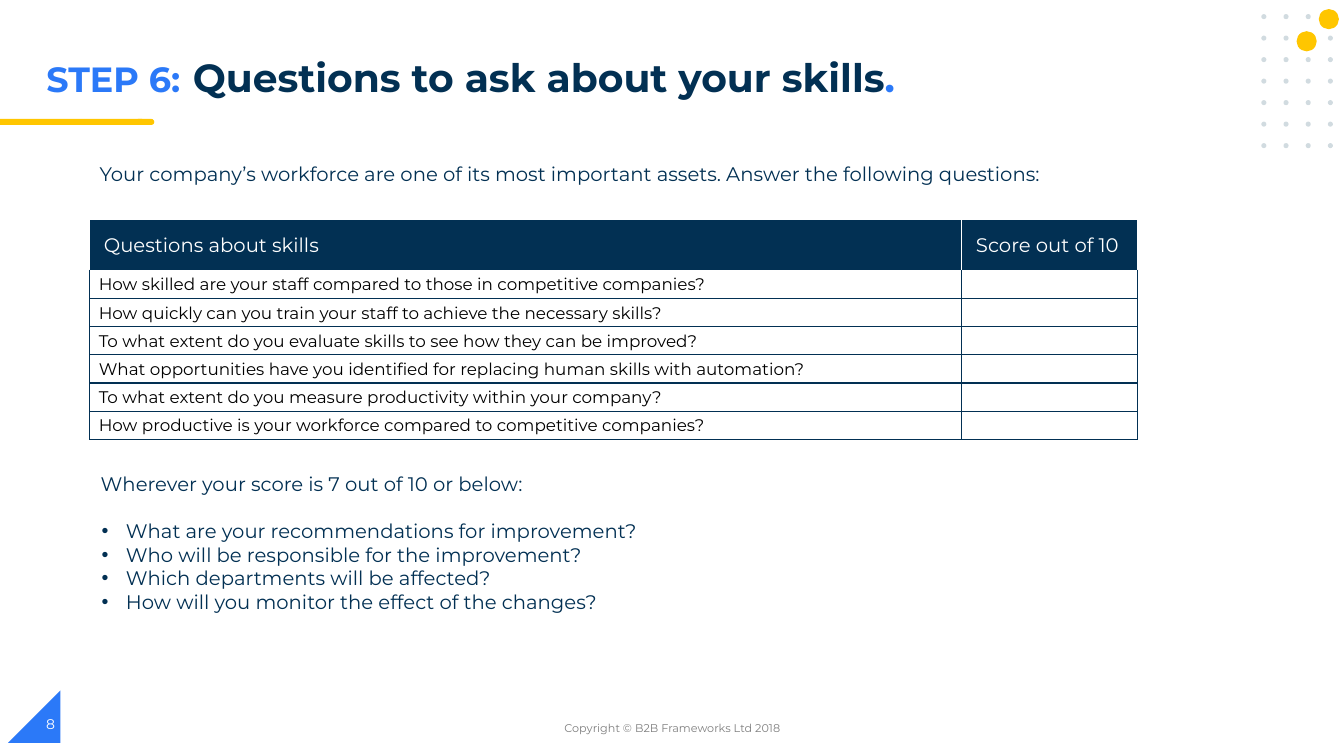
"""Build the slide of questions to ask about a company's skills."""
from dataclasses import dataclass
from itertools import product

from lxml.etree import SubElement
from pptx import Presentation
from pptx.dml.color import RGBColor
from pptx.enum.shapes import MSO_SHAPE as SHAPE
from pptx.enum.text import MSO_ANCHOR as ANCHOR, MSO_AUTO_SIZE as AUTO_SIZE, PP_ALIGN as ALIGN
from pptx.oxml.ns import qn
from pptx.util import Inches, Pt

NAVY = RGBColor(0x02, 0x30, 0x53)
BLUE = RGBColor(0x2B, 0x79, 0xF8)
YELLOW = RGBColor(0xFF, 0xC6, 0x00)
PALE = RGBColor(0xD1, 0xDB, 0xE0)
GRAY = RGBColor(0x7F, 0x7F, 0x7F)
BLACK = RGBColor(0x00, 0x00, 0x00)
WHITE = RGBColor(0xFF, 0xFF, 0xFF)
FONT = "Montserrat"


@dataclass
class Deco:
    kind: SHAPE
    left: float
    top: float
    width: float
    height: float
    color: RGBColor
    flip: bool = False


@dataclass
class Label:
    text: str
    left: float
    top: float
    width: float
    height: float
    size: int
    color: RGBColor
    align: ALIGN = ALIGN.LEFT
    anchor: ANCHOR = ANCHOR.TOP


@dataclass
class TitlePart:
    text: str
    size: int
    color: RGBColor


DECOS = [
    Deco(SHAPE.RIGHT_TRIANGLE, 0.08, 6.85, 0.52, 0.52, BLUE, flip=True),
    Deco(SHAPE.FLOWCHART_TERMINATOR, 1.34, 1.18, 0.19, 0.06, YELLOW),
    Deco(SHAPE.RECTANGLE, 0, 1.18, 1.41, 0.06, YELLOW),
    *(Deco(SHAPE.OVAL, 12.51 + 0.22 * col, 0.14 + 1.28 / 6 * row, 0.05, 0.05, PALE)
      for row, col in product(range(7), range(4))),
    Deco(SHAPE.OVAL, 13.08, 0.09, 0.2, 0.2, YELLOW),
    Deco(SHAPE.OVAL, 12.86, 0.31, 0.2, 0.2, YELLOW),
]
TITLE = [
    TitlePart("STEP 6:", 25, BLUE),
    TitlePart(" ", 32, BLUE),
    TitlePart("Questions to ask about your skills", 28, NAVY),
    TitlePart(".", 28, BLUE),
]
INTRO = Label("Your company’s workforce are one of its most important assets. "
              "Answer the following questions:", 0.89, 1.56, 10.76, 0.34, 14, NAVY)
FOLLOW_UP = Label("Wherever your score is 7 out of 10 or below:", 0.9, 4.63, 9.55, 1.52, 14, NAVY)
COPYRIGHT = Label("Copyright © B2B Frameworks Ltd 2018", 4.42, 7.02, 4.5, 0.4, 8, GRAY,
                  ALIGN.CENTER, ANCHOR.MIDDLE)
PAGE = Label("8", 0.36, 6.98, 3, 0.4, 10, WHITE, anchor=ANCHOR.MIDDLE)
BULLETS = [
    "What are your recommendations for improvement?",
    "Who will be responsible for the improvement?",
    "Which departments will be affected?",
    "How will you monitor the effect of the changes?",
]
HEADERS = ["Questions about skills", "Score out of 10"]
QUESTIONS = [
    "How skilled are your staff compared to those in competitive companies?",
    "How quickly can you train your staff to achieve the necessary skills?",
    "To what extent do you evaluate skills to see how they can be improved?",
    "What opportunities have you identified for replacing human skills with automation?",
    "To what extent do you measure productivity within your company?",
    "How productive is your workforce compared to competitive companies?",
]
COL_WIDTHS = [8.65, 1.74]
HEADER_HEIGHT, ROW_HEIGHT = 0.5, 0.28


def add_run(p, text: str, size: int, color: RGBColor, bold: bool = False) -> None:
    r = p.add_run()
    r.text = text
    r.font.name = FONT
    r.font.size = Pt(size)
    r.font.bold = bold
    r.font.color.rgb = color


def add_deco(slide, deco: Deco) -> None:
    sp = slide.shapes.add_shape(deco.kind, Inches(deco.left), Inches(deco.top),
                                Inches(deco.width), Inches(deco.height))
    sp.shadow.inherit = False
    sp.fill.solid()
    sp.fill.fore_color.rgb = deco.color
    sp.line.fill.background()
    if deco.flip:
        sp._element.spPr.find(qn("a:xfrm")).set("flipH", "1")


def add_title(slide) -> None:
    title = slide.shapes.title
    title.left, title.top = Inches(0.36), Inches(0.47)
    title.width, title.height = Inches(10.27), Inches(0.6)
    tf = title.text_frame
    tf.word_wrap = True
    tf.auto_size = AUTO_SIZE.NONE
    tf.vertical_anchor = ANCHOR.MIDDLE
    p = tf.paragraphs[0]
    p.alignment = ALIGN.LEFT
    p.line_spacing = 0.9
    for part in TITLE:
        add_run(p, part.text, part.size, part.color, bold=True)


def add_label(slide, label: Label):
    sp = slide.shapes.add_textbox(Inches(label.left), Inches(label.top),
                                  Inches(label.width), Inches(label.height))
    tf = sp.text_frame
    tf.word_wrap = True
    tf.vertical_anchor = label.anchor
    p = tf.paragraphs[0]
    p.alignment = label.align
    add_run(p, label.text, label.size, label.color)
    return tf


def add_bullet(tf, text: str, gap: float) -> None:
    p = tf.add_paragraph()
    pPr = p._p.get_or_add_pPr()
    pPr.set("marL", str(Inches(0.25)))
    pPr.set("indent", str(Inches(-0.24)))
    SubElement(SubElement(pPr, qn("a:buClr")), qn("a:srgbClr"), val=str(NAVY))
    SubElement(pPr, qn("a:buFont"), typeface="Arial")
    SubElement(pPr, qn("a:buChar"), char="•")
    p.space_before = Pt(gap)
    add_run(p, text, 14, NAVY)


def set_borders(cell, colors: dict[str, RGBColor]) -> None:
    tcPr = cell._tc.get_or_add_tcPr()
    for side, color in colors.items():
        ln = SubElement(tcPr, qn(f"a:ln{side}"), w=str(Pt(1)))
        SubElement(SubElement(ln, qn("a:solidFill")), qn("a:srgbClr"), val=str(color))


def fill_cell(cell, text: str, header: bool, top: RGBColor) -> None:
    edge = WHITE if header else NAVY
    set_borders(cell, {"L": edge, "R": edge, "T": top, "B": edge})
    if header:
        cell.fill.solid()
        cell.fill.fore_color.rgb = NAVY
    else:
        cell.fill.background()
    cell.vertical_anchor = ANCHOR.MIDDLE
    cell.margin_left = Inches(0.14 if header else 0.09)
    cell.margin_right = cell.margin_top = Inches(0.01)
    cell.margin_bottom = 0
    p = cell.text_frame.paragraphs[0]
    if text:
        add_run(p, text, 14 if header else 12, WHITE if header else BLACK)
    else:
        SubElement(p._p, qn("a:endParaRPr"), sz="1200")


def add_questions(slide) -> None:
    rows = [HEADERS, *([question, ""] for question in QUESTIONS)]
    height = HEADER_HEIGHT + ROW_HEIGHT * len(QUESTIONS)
    table = slide.shapes.add_table(len(rows), len(HEADERS), Inches(0.89), Inches(2.18),
                                   Inches(sum(COL_WIDTHS)), Inches(height)).table
    table.first_row = table.horz_banding = False
    for col, width in zip(table.columns, COL_WIDTHS):
        col.width = Inches(width)
    for i, texts in enumerate(rows):
        table.rows[i].height = Inches(ROW_HEIGHT if i else HEADER_HEIGHT)
        for j, text in enumerate(texts):
            fill_cell(table.cell(i, j), text, header=i == 0, top=WHITE if i < 2 else NAVY)


def main() -> None:
    prs = Presentation()
    prs.slide_width, prs.slide_height = Inches(13.33), Inches(7.5)
    slide = prs.slides.add_slide(prs.slide_layouts[5])
    for deco in DECOS:
        add_deco(slide, deco)
    add_title(slide)
    add_label(slide, INTRO)
    add_questions(slide)
    tf = add_label(slide, FOLLOW_UP)
    for i, text in enumerate(BULLETS):
        add_bullet(tf, text, gap=0 if i else 17)
    add_label(slide, COPYRIGHT)
    add_label(slide, PAGE)
    prs.save("out.pptx")


if __name__ == "__main__":
    main()
